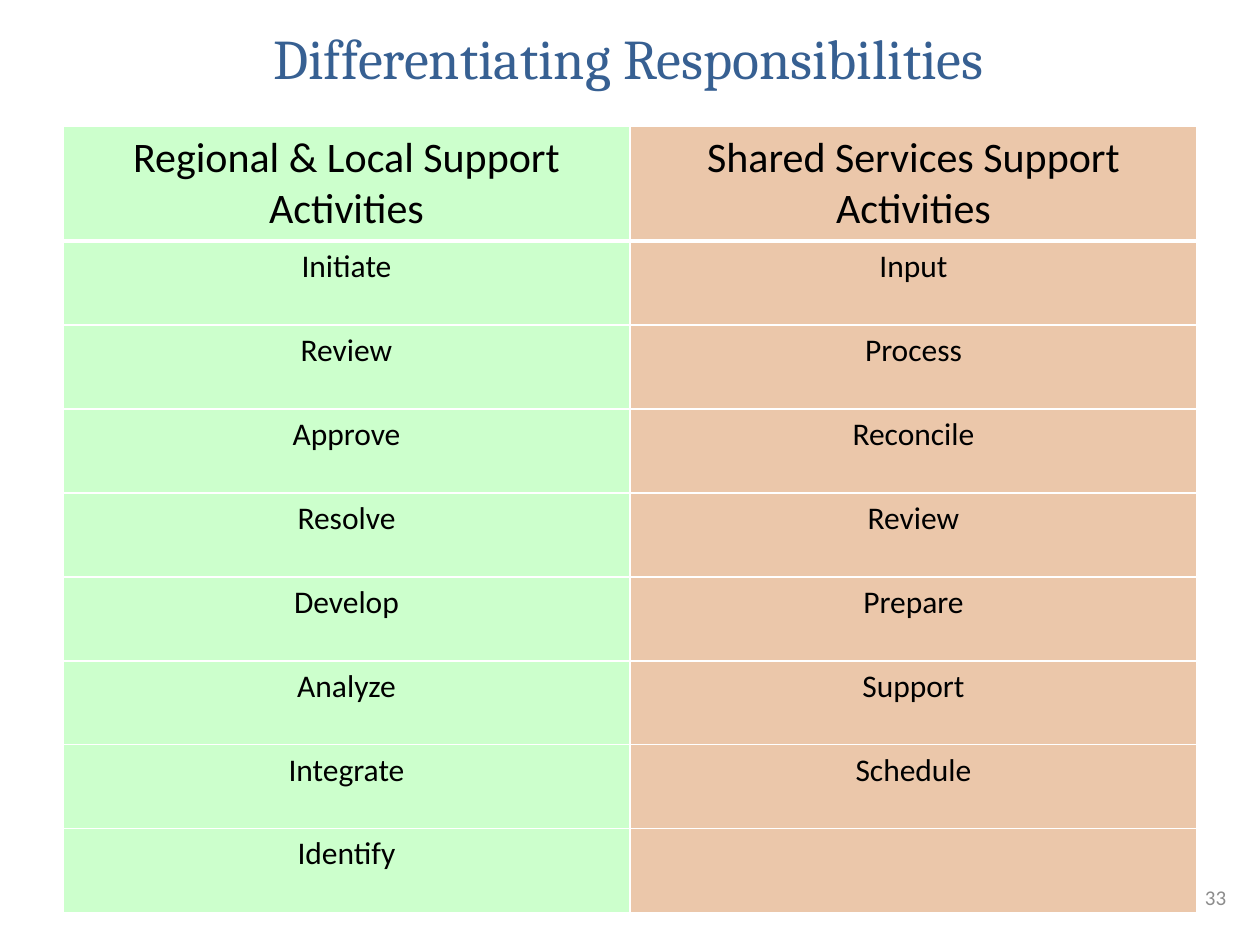
from itertools import zip_longest
from lxml.etree import SubElement
from pptx import Presentation
from pptx.dml.color import RGBColor
from pptx.enum.text import MSO_ANCHOR as ANCHOR, PP_ALIGN as ALIGN
from pptx.oxml.ns import qn
from pptx.util import Inches, Pt

COLORS = {"title": "376092", "text": "000000", "number": "8C8C8C",
          "local": "CCFFCC", "shared": "EBC7AA", "border": "FFFFFF"}
ACTIVITIES = {
    "local": ["Regional & Local Support Activities", "Initiate", "Review", "Approve",
              "Resolve", "Develop", "Analyze", "Integrate", "Identify"],
    "shared": ["Shared Services Support Activities", "Input", "Process", "Reconcile",
               "Review", "Prepare", "Support", "Schedule"],
}
HEADER_SHARE = 0.9 / 6.23


def write(tf, text, size=18, font="Calibri", color="text", align=ALIGN.CENTER):
    p = tf.paragraphs[0]
    p.alignment = align
    r = p.add_run()
    r.text = text
    r.font.size = Pt(size)
    r.font.name = font
    r.font.bold = False
    r.font.color.rgb = RGBColor.from_string(COLORS[color])


def set_borders(cell, bottom=1, top=1):
    tcPr = cell._tc.get_or_add_tcPr()
    for side, width in (("L", 1), ("R", 1), ("T", top), ("B", bottom)):
        ln = SubElement(tcPr, qn(f"a:ln{side}"), w=str(Pt(width)))
        fill = SubElement(ln, qn("a:solidFill"))
        SubElement(fill, qn("a:srgbClr"), val=COLORS["border"])


def place_title(s, box):
    sp = s.shapes.title
    sp.left, sp.top, sp.width, sp.height = box
    sp.text_frame.vertical_anchor = ANCHOR.MIDDLE
    write(sp.text_frame, "Differentiating Responsibilities",
          size=32, font="Cambria", color="title")


def place_table(s, box):
    rows = list(zip_longest(*ACTIVITIES.values(), fillvalue=""))
    table = s.shapes.add_table(len(rows), len(ACTIVITIES), *box).table
    height = box[3]
    header = int(height * HEADER_SHARE)
    for i, texts in enumerate(rows):
        table.rows[i].height = header if i == 0 else (height - header) // (len(rows) - 1)
        for j, (side, text) in enumerate(zip(ACTIVITIES, texts)):
            cell = table.cell(i, j)
            set_borders(cell, bottom=3 if i == 0 else 1, top=3 if i == 1 else 1)
            cell.fill.solid()
            cell.fill.fore_color.rgb = RGBColor.from_string(COLORS[side])
            if text:
                write(cell.text_frame, text, size=24 if i == 0 else 18)


def place_number(s, box):
    tf = s.shapes.add_textbox(*box).text_frame
    tf.word_wrap = True
    tf.vertical_anchor = ANCHOR.MIDDLE
    write(tf, "33", size=12, color="number", align=ALIGN.RIGHT)


def main():
    prs = Presentation()
    prs.slide_width, prs.slide_height = Inches(10), Inches(7.5)
    s = prs.slides.add_slide(prs.slide_layouts[5])
    place_title(s, [Inches(v) for v in (0.08, 0.08, 9.82, 0.75)])
    place_table(s, [Inches(v) for v in (0.5, 1, 9, 6.23)])
    place_number(s, [Inches(v) for v in (7.5, 6.92, 2.33, 0.4)])
    prs.save("out.pptx")


if __name__ == "__main__":
    main()
